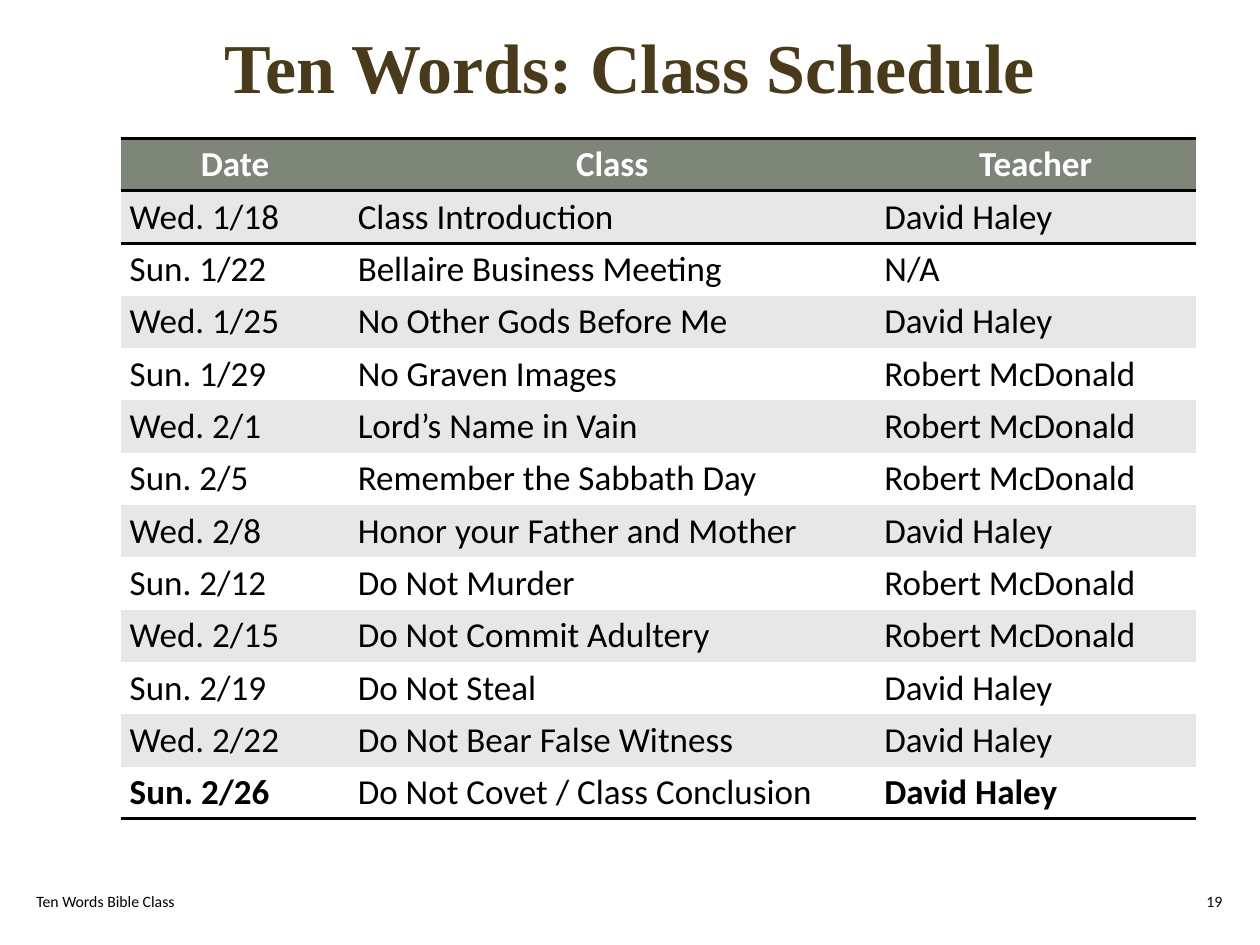
from lxml import etree
from pptx import Presentation
from pptx.dml.color import RGBColor
from pptx.enum.text import MSO_ANCHOR, PP_ALIGN
from pptx.oxml.ns import qn
from pptx.util import Inches, Pt

LEFT, CENTER, RIGHT = PP_ALIGN.LEFT, PP_ALIGN.CENTER, PP_ALIGN.RIGHT
MIDDLE = MSO_ANCHOR.MIDDLE

TITLE = "Ten Words: Class Schedule"
FOOTER = "Ten Words Bible Class"
PAGE_NUMBER = "19"
HEADER = ("Date", "Class", "Teacher")
SCHEDULE = [
    ("Wed. 1/18", "Class Introduction", "David Haley"),
    ("Sun. 1/22", "Bellaire Business Meeting", "N/A"),
    ("Wed. 1/25", "No Other Gods Before Me", "David Haley"),
    ("Sun. 1/29", "No Graven Images", "Robert McDonald"),
    ("Wed. 2/1", "Lord’s Name in Vain", "Robert McDonald"),
    ("Sun. 2/5", "Remember the Sabbath Day", "Robert McDonald"),
    ("Wed. 2/8", "Honor your Father and Mother", "David Haley"),
    ("Sun. 2/12", "Do Not Murder", "Robert McDonald"),
    ("Wed. 2/15", "Do Not Commit Adultery", "Robert McDonald"),
    ("Sun. 2/19", "Do Not Steal", "David Haley"),
    ("Wed. 2/22", "Do Not Bear False Witness", "David Haley"),
    ("Sun. 2/26", "Do Not Covet / Class Conclusion", "David Haley"),
]
BOLD_LAST_ROW = ("Date", "Teacher")
COLUMN_WIDTHS = (1.81, 4.18, 2.54)
TABLE_LEFT, TABLE_TOP, TABLE_HEIGHT = 0.96, 1.1, 5.4
NO_STYLE = "{2D5ABB26-0587-4C30-8999-92F81FD0307C}"
COLORS = {
    "title": "4A3A1C",
    "header": "7E8679",
    "band": "E7E7E7",
    "white": "FFFFFF",
    "black": "000000",
}


def color(name):
    return RGBColor.from_string(COLORS[name])


def write(paragraph, text, size, color_name, align=LEFT, font="Calibri", bold=False):
    paragraph.alignment = align
    run = paragraph.add_run()
    run.text = text
    run.font.name = font
    run.font.size = Pt(size)
    run.font.bold = bold
    run.font.color.rgb = color(color_name)


def add_text(slide, box, text, size, color_name, **style):
    frame = slide.shapes.add_textbox(*map(Inches, box)).text_frame
    frame.word_wrap = True
    frame.vertical_anchor = MIDDLE
    write(frame.paragraphs[0], text, size, color_name, **style)
    return frame


def add_borders(cell, sides):
    properties = cell._tc.get_or_add_tcPr()
    for position, side in enumerate(sides):
        line = etree.Element(qn(f"a:ln{side}"), w=str(Pt(2)))
        fill = etree.SubElement(line, qn("a:solidFill"))
        etree.SubElement(fill, qn("a:srgbClr"), val=COLORS["black"])
        properties.insert(position, line)


def add_schedule(slide):
    rows = [HEADER] + SCHEDULE
    last = len(rows) - 1
    table = slide.shapes.add_table(
        len(rows), len(HEADER), Inches(TABLE_LEFT), Inches(TABLE_TOP),
        Inches(sum(COLUMN_WIDTHS)), Inches(TABLE_HEIGHT)).table
    table._tbl.tblPr.find(qn("a:tableStyleId")).text = NO_STYLE
    for column, width in zip(table.columns, COLUMN_WIDTHS):
        column.width = Inches(width)
    for r, row in enumerate(rows):
        table.rows[r].height = Inches(TABLE_HEIGHT / len(rows))
        for c, text in enumerate(row):
            cell = table.cell(r, c)
            cell.margin_left = cell.margin_right = Inches(0.07)
            cell.margin_top = cell.margin_bottom = Inches(0.03)
            cell.vertical_anchor = MIDDLE
            cell.fill.solid()
            paragraph = cell.text_frame.paragraphs[0]
            if r == 0:
                cell.fill.fore_color.rgb = color("header")
                write(paragraph, text, 20, "white", CENTER, bold=True)
                add_borders(cell, "TB")
            else:
                cell.fill.fore_color.rgb = color("band" if r % 2 else "white")
                bold = r == last and HEADER[c] in BOLD_LAST_ROW
                write(paragraph, text, 20, "black", bold=bold)
                add_borders(cell, "B" if r == last else "T" if r == 1 else "")


def main():
    """Build the class schedule slide."""
    presentation = Presentation()
    presentation.slide_width, presentation.slide_height = Inches(10), Inches(7.5)
    slide = presentation.slides.add_slide(presentation.slide_layouts[6])
    title = add_text(slide, (0.69, 0.15, 8.62, 0.82), TITLE, 40, "title",
                     align=CENTER, font="Times New Roman", bold=True)
    title.paragraphs[0].line_spacing = 0.9
    add_schedule(slide)
    add_text(slide, (0.19, 6.95, 3.38, 0.4), FOOTER, 9, "black")
    add_text(slide, (7.55, 6.95, 2.25, 0.4), PAGE_NUMBER, 9, "black", align=RIGHT)
    presentation.save("out.pptx")


if __name__ == "__main__":
    main()
